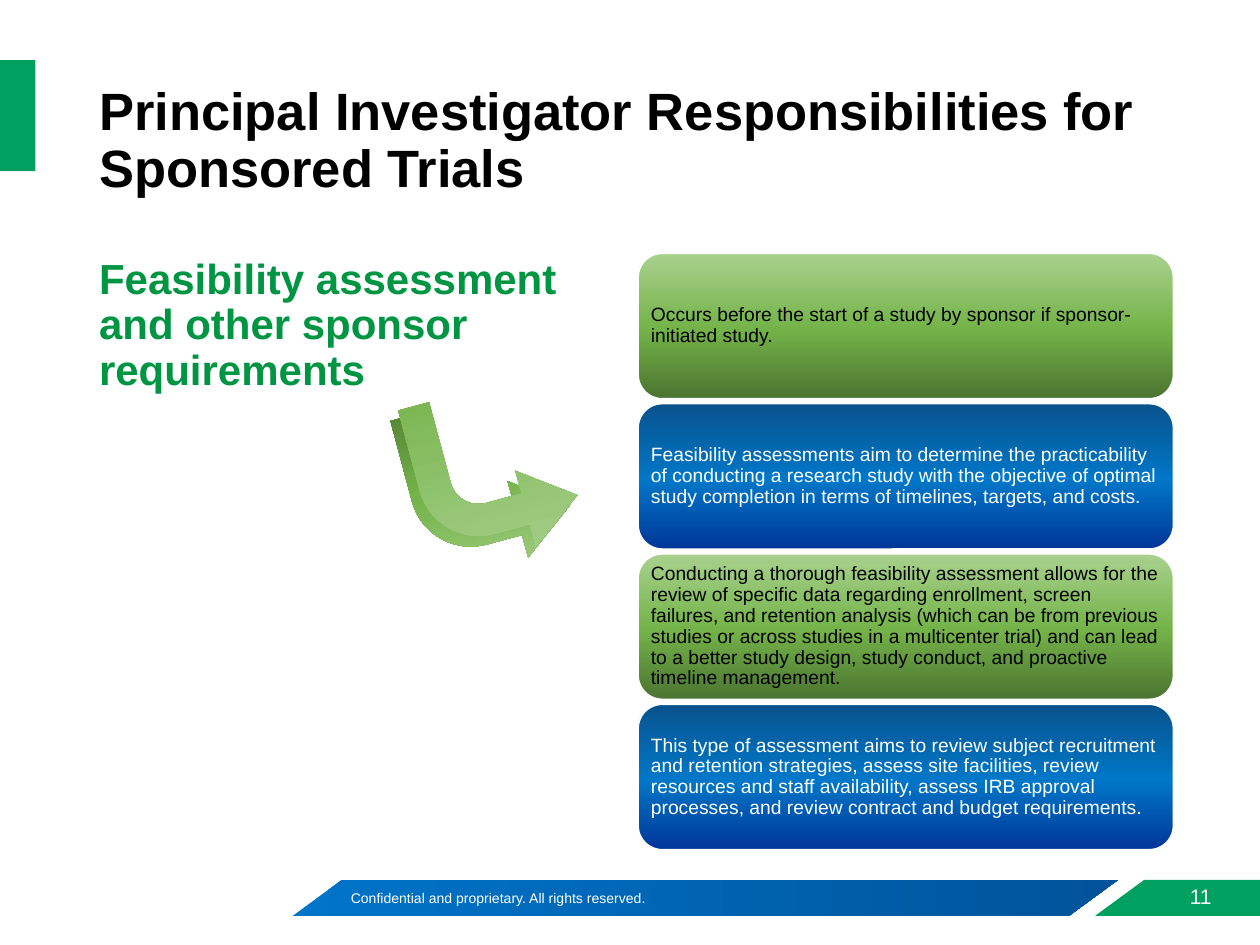
from lxml import etree
from pptx import Presentation
from pptx.dml.color import RGBColor
from pptx.enum.shapes import MSO_SHAPE
from pptx.enum.text import MSO_ANCHOR, MSO_AUTO_SIZE, PP_ALIGN
from pptx.oxml.ns import qn
from pptx.util import Pt

RECTANGLE, ROUNDED = MSO_SHAPE.RECTANGLE, MSO_SHAPE.ROUNDED_RECTANGLE
PARALLELOGRAM, BENT_ARROW = MSO_SHAPE.PARALLELOGRAM, MSO_SHAPE.BENT_ARROW
TOP, MIDDLE = MSO_ANCHOR.TOP, MSO_ANCHOR.MIDDLE
LEFT, CENTER = PP_ALIGN.LEFT, PP_ALIGN.CENTER
NO_AUTOFIT = MSO_AUTO_SIZE.NONE

FONT = "Arial"
COLORS = {"white": "FFFFFF", "black": "000000", "accent": "00A160", "heading": "009543"}
# Gradient stops: position in percent, colour
GREEN = [(0, "4B7430"), (48, "74B349"), (100, "A9D18E")]
BLUE = [(0, "003798"), (48, "0077C8"), (100, "08528C")]
ARROW_FRONT = [(0, "4B7430"), (0, "74B349"), (100, "A9D18E")]
FOOTER_BAND = [(0, "0074C8"), (100, "00539B")]

CARDS = [
    "Occurs before the start of a study by sponsor if sponsor-initiated study.",
    "Feasibility assessments aim to determine the practicability of conducting a research "
    "study with the objective of optimal study completion in terms of timelines, targets, "
    "and costs.",
    "Conducting a thorough feasibility assessment allows for the review of specific data "
    "regarding enrollment, screen failures, and retention analysis (which can be from "
    "previous studies or across studies in a multicenter trial) and can lead to a better "
    "study design, study conduct, and proactive timeline management.",
    "This type of assessment aims to review subject recruitment and retention strategies, "
    "assess site facilities, review resources and staff availability, assess IRB approval "
    "processes, and review contract and budget requirements.",
]


def fill_solid(shape, color):
    shape.fill.solid()
    shape.fill.fore_color.rgb = RGBColor.from_string(COLORS[color])


def fill_gradient(shape, stops, angle):
    """Fill with any number of stops; the angle runs counter-clockwise."""
    shape.fill.gradient()
    shape.fill.gradient_angle = angle
    stop_list = next(shape._element.spPr.iter(qn("a:gsLst")))
    for stop in list(stop_list):
        stop_list.remove(stop)
    for position, color in stops:
        stop = etree.SubElement(stop_list, qn("a:gs"), pos=str(position * 1000))
        etree.SubElement(stop, qn("a:srgbClr"), val=color)


def add_shape(slide, kind, area, adjustments=()):
    shape = slide.shapes.add_shape(kind, *map(Pt, area))
    shape.shadow.inherit = False
    shape.line.fill.background()
    for index, value in enumerate(adjustments):
        shape.adjustments[index] = value
    return shape


def write_text(box, text, size, color, bold=False, anchor=TOP, align=LEFT, spacing=1):
    frame = box.text_frame
    frame.word_wrap = True
    frame.auto_size = NO_AUTOFIT
    frame.vertical_anchor = anchor
    para = frame.paragraphs[0]
    para.alignment = align
    para.line_spacing = spacing
    span = para.add_run()
    span.text = text
    span.font.name = FONT
    span.font.size = Pt(size)
    span.font.bold = bold
    span.font.color.rgb = RGBColor.from_string(COLORS[color])


def add_text(slide, area, text, size, color, **style):
    box = slide.shapes.add_textbox(*map(Pt, area))
    write_text(box, text, size, color, **style)


def add_title(slide, text):
    title = slide.shapes.title
    title.left, title.top, title.width, title.height = map(Pt, (49.5, 28.8, 621, 104.4))
    write_text(title, text, 30, "black", bold=True, anchor=MIDDLE, spacing=0.9)


def add_card(slide, index, text):
    stops, color = ((GREEN, "black"), (BLUE, "white"))[index % 2]
    card = add_shape(slide, ROUNDED, (364.6, 144.7 + index * 85.9, 306, 83.2))
    fill_gradient(card, stops, 90)
    card.line.color.rgb = RGBColor.from_string(COLORS["white"])
    card.line.width = Pt(1)
    frame = card.text_frame
    frame.margin_left = frame.margin_right = Pt(3.3)
    frame.margin_top = frame.margin_bottom = Pt(3.3)
    write_text(card, text, 11, color, anchor=MIDDLE, spacing=0.9)


def add_bent_arrow(slide, left, top, stops):
    arrow = add_shape(slide, BENT_ARROW, (left, top, 86.4, 95.8),
                      (0.212, 0.261, 0.354, 0.403))
    arrow.rotation = 165
    arrow._element.spPr.find(qn("a:xfrm")).set("flipH", "1")
    fill_gradient(arrow, stops, 90)


def add_footer(slide):
    band = add_shape(slide, PARALLELOGRAM, (167.2, 502.8, 471.6, 20.6), (1.362,))
    fill_gradient(band, FOOTER_BAND, 0)
    add_text(slide, (193.4, 504.7, 275.8, 17.3),
             "Confidential and proprietary. All rights reserved.", 8, "white")

    # Slanted tab behind the page number
    builder = slide.shapes.build_freeform(Pt(625.7), Pt(523.4), scale=1.0)
    corners = [(653.8, 502.8), (720, 502.8), (720, 523.4)]
    builder.add_line_segments([(Pt(x), Pt(y)) for x, y in corners], close=True)
    tab = builder.convert_to_shape()
    tab.shadow.inherit = False
    tab.line.fill.background()
    fill_solid(tab, "accent")
    add_text(slide, (669.6, 501.1, 33.1, 22.3), "11", 12, "white",
             anchor=MIDDLE, align=CENTER)


def main():
    deck = Presentation()
    deck.slide_width, deck.slide_height = Pt(720), Pt(540)
    slide = deck.slides.add_slide(deck.slide_layouts[5])

    # Frame of the page
    add_footer(slide)
    fill_solid(add_shape(slide, RECTANGLE, (0, 34.4, 20.2, 63.4)), "accent")

    # Headings
    add_title(slide, "Principal Investigator Responsibilities for Sponsored Trials")
    add_text(slide, (49.5, 144, 306, 95),
             "Feasibility assessment and other sponsor requirements",
             24, "heading", bold=True, spacing=0.9)

    # Cards in alternating colours
    for index, text in enumerate(CARDS):
        add_card(slide, index, text)

    # Arrow with a darker one behind it
    add_bent_arrow(slide, 234, 227.7, GREEN)
    add_bent_arrow(slide, 238.4, 221.7, ARROW_FRONT)

    deck.save("out.pptx")


if __name__ == "__main__":
    main()
